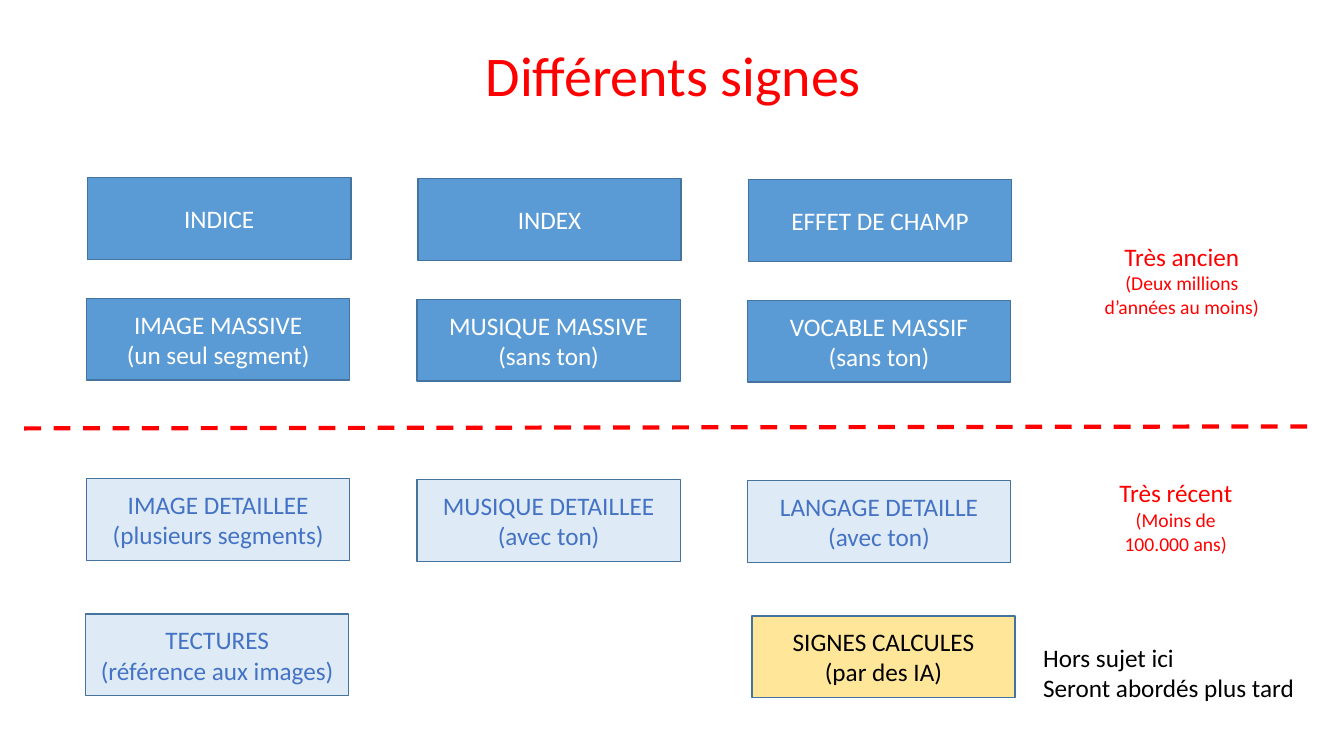
from pptx import Presentation
from pptx import util as u
from pptx.dml.color import RGBColor
from pptx.enum import dml, shapes, text
from pptx.oxml.ns import qn
from lxml import etree

COLORS = {
    "red": "FF0000", "black": "000000", "white": "FFFFFF", "outline": "43739E",
    "blue": "5B9BD5", "pale": "DEEBF7", "ink": "4472C4", "yellow": "FFE699",
}
CARD_W, CARD_H = 188, 58.5
COLUMN_STEP = 236
DRIFT = 0.72  # each card sits slightly lower than its left neighbour

ANCIENT = [
    [("INDICE",), ("INDEX",), ("EFFET DE CHAMP",)],
    [("IMAGE MASSIVE", "(un seul segment)"), ("MUSIQUE MASSIVE", "(sans ton)"),
     ("VOCABLE MASSIF", "(sans ton)")],
]
RECENT = [
    [("IMAGE DETAILLEE", "(plusieurs segments)"), ("MUSIQUE DETAILLEE", "(avec ton)"),
     ("LANGAGE DETAILLE", "(avec ton)")],
    [("TECTURES", "(référence aux images)")],
]


def rgb(name):
    return RGBColor.from_string(COLORS[name])


def write(holder, lines, color, size=18, detail_size=None, align="CENTER",
          anchor="TOP", wrap=False):
    """Fill a shape with lines; lines after the first take detail_size."""
    frame = holder.text_frame
    frame.word_wrap = wrap
    frame.auto_size = text.MSO_AUTO_SIZE.NONE
    frame.vertical_anchor = getattr(text.MSO_ANCHOR, anchor)
    for i, line in enumerate(lines):
        paragraph = frame.add_paragraph() if i else frame.paragraphs[0]
        paragraph.alignment = getattr(text.PP_ALIGN, align)
        run = paragraph.add_run()
        run.text = line
        run.font.name = "Calibri"
        run.font.size = u.Pt(detail_size if i and detail_size else size)
        run.font.color.rgb = rgb(color)


def heading(slide, left, top, width, height):
    title = slide.shapes.title
    title.left, title.top = u.Pt(left), u.Pt(top)
    title.width, title.height = u.Pt(width), u.Pt(height)
    write(title, ["Différents signes"], "red", size=40, anchor="MIDDLE")


def card(slide, left, top, lines, fill, ink):
    sign = slide.shapes.add_shape(shapes.MSO_SHAPE.RECTANGLE, u.Pt(left), u.Pt(top),
                                  u.Pt(CARD_W), u.Pt(CARD_H))
    sign.shadow.inherit = False
    sign.fill.solid()
    sign.fill.fore_color.rgb = rgb(fill)
    sign.line.color.rgb = rgb("outline")
    sign.line.width = u.Pt(1)
    write(sign, lines, ink, anchor="MIDDLE", wrap=True)


def card_grid(slide, left, top, row_step, rows, fill, ink):
    for r, row in enumerate(rows):
        for c, lines in enumerate(row):
            card(slide, left - DRIFT * r + COLUMN_STEP * c,
                 top + row_step * r + DRIFT * c, lines, fill, ink)


def note(slide, left, top, width, height, lines, color, **style):
    box = slide.shapes.add_textbox(u.Pt(left), u.Pt(top), u.Pt(width), u.Pt(height))
    write(box, lines, color, **style)


def divider(slide, x1, y1, x2, y2):
    border = slide.shapes.add_connector(shapes.MSO_CONNECTOR.STRAIGHT,
                                        u.Pt(x1), u.Pt(y1), u.Pt(x2), u.Pt(y2))
    border.line.color.rgb = rgb("red")
    border.line.width = u.Pt(3)
    border.line.dash_style = dml.MSO_LINE.DASH
    etree.SubElement(border._element.spPr, qn("a:effectLst"))


def main():
    deck = Presentation()
    deck.slide_width, deck.slide_height = u.Pt(960), u.Pt(540)
    slide = deck.slides.add_slide(deck.slide_layouts[5])

    heading(slide, 333.4, 25.2, 295.2, 55.4)

    # Ancient signs above the divider
    card_grid(slide, 62.64, 126.7, 86.4, ANCIENT, "blue", "white")
    note(slide, 781.2, 168.5, 126, 63.4,
         ["Très ancien", "(Deux millions", "d’années au moins)"], "red", detail_size=14)

    divider(slide, 17.3, 306, 933.8, 304.6)

    # Recent signs below the divider
    card_grid(slide, 61.92, 342, 96.5, RECENT, "pale", "ink")
    note(slide, 792, 337.7, 95.8, 63.4,
         ["Très récent", "(Moins de", "100.000 ans)"], "red", detail_size=14)

    # Computed signs, outside the topic
    card(slide, 537.1, 439.9, ["SIGNES CALCULES", "(par des IA)"], "yellow", "black")
    note(slide, 738, 455, 195.8, 51.1,
         ["Hors sujet ici", "Seront abordés plus tard"], "black", align="LEFT")

    deck.save("out.pptx")


if __name__ == "__main__":
    main()
